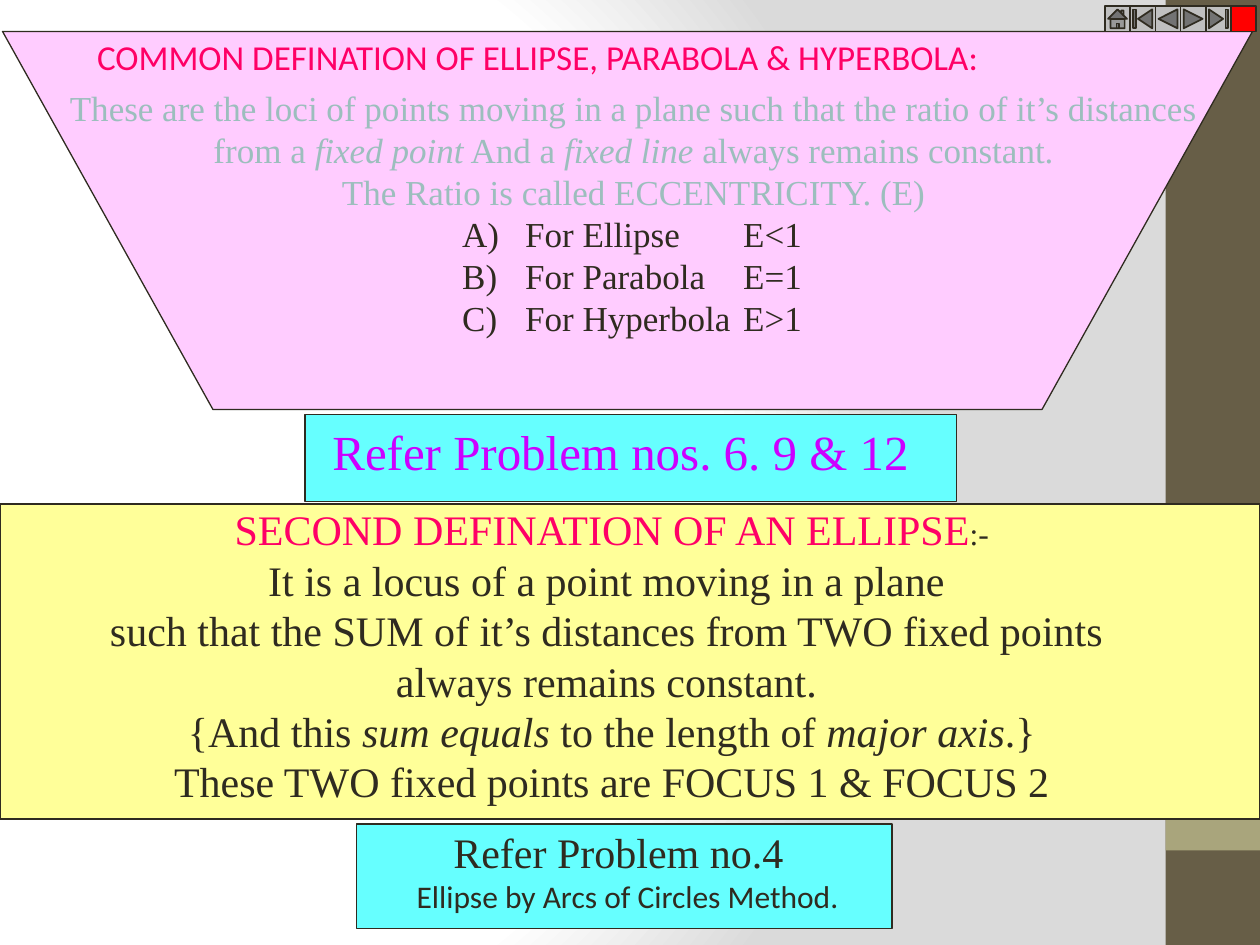
from lxml import etree
from pptx import Presentation
from pptx.dml.color import RGBColor
from pptx.enum.shapes import MSO_SHAPE
from pptx.enum.text import MSO_ANCHOR, PP_ALIGN
from pptx.oxml import parse_xml
from pptx.oxml.ns import nsdecls, qn
from pptx.util import Inches, Pt

RECT = MSO_SHAPE.RECTANGLE
LEFT, CENTER = PP_ALIGN.LEFT, PP_ALIGN.CENTER
TOP = MSO_ANCHOR.TOP
BUTTONS = [
    MSO_SHAPE.ACTION_BUTTON_HOME,
    MSO_SHAPE.ACTION_BUTTON_BEGINNING,
    MSO_SHAPE.ACTION_BUTTON_BACK_OR_PREVIOUS,
    MSO_SHAPE.ACTION_BUTTON_FORWARD_OR_NEXT,
    MSO_SHAPE.ACTION_BUTTON_END,
    MSO_SHAPE.ACTION_BUTTON_CUSTOM,
]
SERIF, SANS = "Times New Roman", "Calibri"
COLORS = {
    "ink": "2F2B20", "band": "675E47", "accent": "A9A57C",
    "pink": "FFCCFF", "cyan": "66FFFF", "yellow": "FFFF99",
    "heading": "FF0066", "loci": "9CBEBD", "refer": "CC00FF",
    "button": "C0C0C0", "stop": "FF0000", "light": "FFFFFF", "shade": "DADADA",
}


def color(name):
    return RGBColor.from_string(COLORS[name])


def set_background(s):
    stops = [(0, "light"), (75000, "light"), (100000, "shade")]
    gs = "".join(f'<a:gs pos="{pos}"><a:srgbClr val="{COLORS[name]}"/></a:gs>'
                 for pos, name in stops)
    s.element.cSld.insert(0, parse_xml(
        f'<p:bg {nsdecls("p", "a")}><p:bgPr><a:gradFill rotWithShape="1">'
        f'<a:gsLst>{gs}</a:gsLst><a:path path="circle">'
        '<a:fillToRect l="20000" t="50000" r="100000" b="50000"/></a:path>'
        '</a:gradFill><a:effectLst/></p:bgPr></p:bg>'))


def style_shape(sp, fill, line="ink", width=0.75):
    sp.shadow.inherit = False
    sp.fill.solid()
    sp.fill.fore_color.rgb = color(fill)
    if line:
        sp.line.color.rgb = color(line)
        sp.line.width = Pt(width)
    else:
        sp.line.fill.background()


def add_box(s, box, fill, kind=RECT, **line):
    sp = s.shapes.add_shape(kind, *map(Inches, box))
    style_shape(sp, fill, **line)


def number_paragraph(p):
    pPr = p._p.get_or_add_pPr()
    pPr.set("marL", str(Inches(0.5)))
    pPr.set("indent", str(-Inches(0.5)))
    etree.SubElement(pPr, qn("a:buAutoNum")).set("type", "alphaUcParenR")


def write(tf, paragraphs, size=20, font=SERIF, ink="ink", align=CENTER, numbered=False):
    tf.word_wrap = True
    tf.vertical_anchor = TOP
    for i, runs in enumerate(paragraphs):
        p = tf.paragraphs[0] if i == 0 else tf.add_paragraph()
        p.alignment = align
        runs = [(runs, {})] if isinstance(runs, str) else runs
        p.line_spacing = Pt(1.2 * max(fmt.get("size", size) for _, fmt in runs))
        if numbered:
            number_paragraph(p)
        for text, fmt in runs:
            r = p.add_run()
            r.text = text
            r.font.name = fmt.get("font", font)
            r.font.size = Pt(fmt.get("size", size))
            r.font.italic = fmt.get("italic", False)
            r.font.color.rgb = color(fmt.get("ink", ink))


def add_text(s, box, paragraphs, **fmt):
    write(s.shapes.add_textbox(*map(Inches, box)).text_frame, paragraphs, **fmt)


def add_side_band(s, x, y, w, h):
    add_box(s, (x, y, w, h), "band", line=None)
    add_box(s, (x, y + 6, w, w), "accent", line=None)


def add_common_definition(s, x, y, w, h):
    slant = 1.67
    corners = [(x + slant, y + h), (x + w - slant, y + h), (x + w, y)]
    builder = s.shapes.build_freeform(Inches(x), Inches(y), scale=1.0)
    builder.add_line_segments([(Inches(a), Inches(b)) for a, b in corners], close=True)
    style_shape(builder.convert_to_shape(), "pink")
    italic = {"italic": True}
    add_text(s, (x + 0.41, y + 0.39, 9.2, 1.1), [
        "These are the loci of points moving in a plane such that the ratio of it’s distances",
        [("from a ", {}), ("fixed point", italic), (" And a ", {}),
         ("fixed line", italic), (" always remains constant.", {})],
        "The Ratio is called ECCENTRICITY. (E)",
    ], ink="loci")
    add_text(s, (x + 3.55, y + 1.39, 2.4, 1.1),
             ["For Ellipse", "For Parabola", "For Hyperbola"], align=LEFT, numbered=True)
    add_text(s, (x + 5.78, y + 1.39, 0.8, 1.1), ["E<1", "E=1", "E>1"], align=LEFT)


def add_second_definition(s, x, y, w, h):
    add_box(s, (x, y, w, h), "yellow")
    italic = {"italic": True}
    add_text(s, (x + 0.76, y - 0.05, 8.19, h), [
        [("SECOND DEFINATION OF AN ELLIPSE", {"ink": "heading"}), (":-", {"size": 18})],
        "It is a locus of a point moving in a plane ",
        "such that the SUM of it’s distances from TWO fixed points ",
        "always remains constant. ",
        [("{And this ", {}), ("sum equals", italic), (" to the length of ", {}),
         ("major axis", italic), (".}", {})],
        "These TWO fixed points are FOCUS 1 & FOCUS 2",
    ], size=24)


def add_problem_list(s, x, y, w, h):
    add_box(s, (x, y, w, h), "cyan")
    add_text(s, (x + 0.12, y + 0.01, 5, 0.57), ["Refer Problem nos. 6. 9 & 12"],
             size=28, ink="refer", align=LEFT)


def add_arcs_problem(s, x, y, w, h):
    add_box(s, (x, y, w, h), "cyan")
    add_text(s, (x - 0.08, y - 0.03, 4.4, 0.8), [
        "Refer Problem no.4 ",
        [(" ", {"size": 18}),
         ("Ellipse by Arcs of Circles Method.", {"size": 18, "font": SANS})],
    ], size=24)


def add_title(s, x, y, w, h):
    title = s.shapes.title
    title.left, title.top, title.width, title.height = map(Inches, (x, y, w, h))
    write(title.text_frame, ["COMMON DEFINATION OF ELLIPSE, PARABOLA & HYPERBOLA:"],
          font=SANS, ink="heading", align=LEFT)
    title.element.getparent().append(title.element)


def add_navigation(s, x, y, side):
    for i, kind in enumerate(BUTTONS):
        fill = "stop" if kind == BUTTONS[-1] else "button"
        add_box(s, (x + i * side, y, side, side), fill, kind, width=1)


def main():
    prs = Presentation()
    prs.slide_width, prs.slide_height = Inches(10), Inches(7.5)
    s = prs.slides.add_slide(prs.slide_layouts[5])
    set_background(s)
    add_side_band(s, 9.25, 0, 0.75, 7.5)
    add_second_definition(s, 0, 4, 10, 2.5)
    add_common_definition(s, 0.02, 0.25, 9.92, 3)
    add_problem_list(s, 2.42, 3.29, 5.17, 0.69)
    add_arcs_problem(s, 2.83, 6.54, 4.25, 0.83)
    add_title(s, 0.67, 0.23, 8.98, 0.43)
    add_navigation(s, 8.77, 0.05, 0.2)
    prs.save("out.pptx")


if __name__ == "__main__":
    main()
